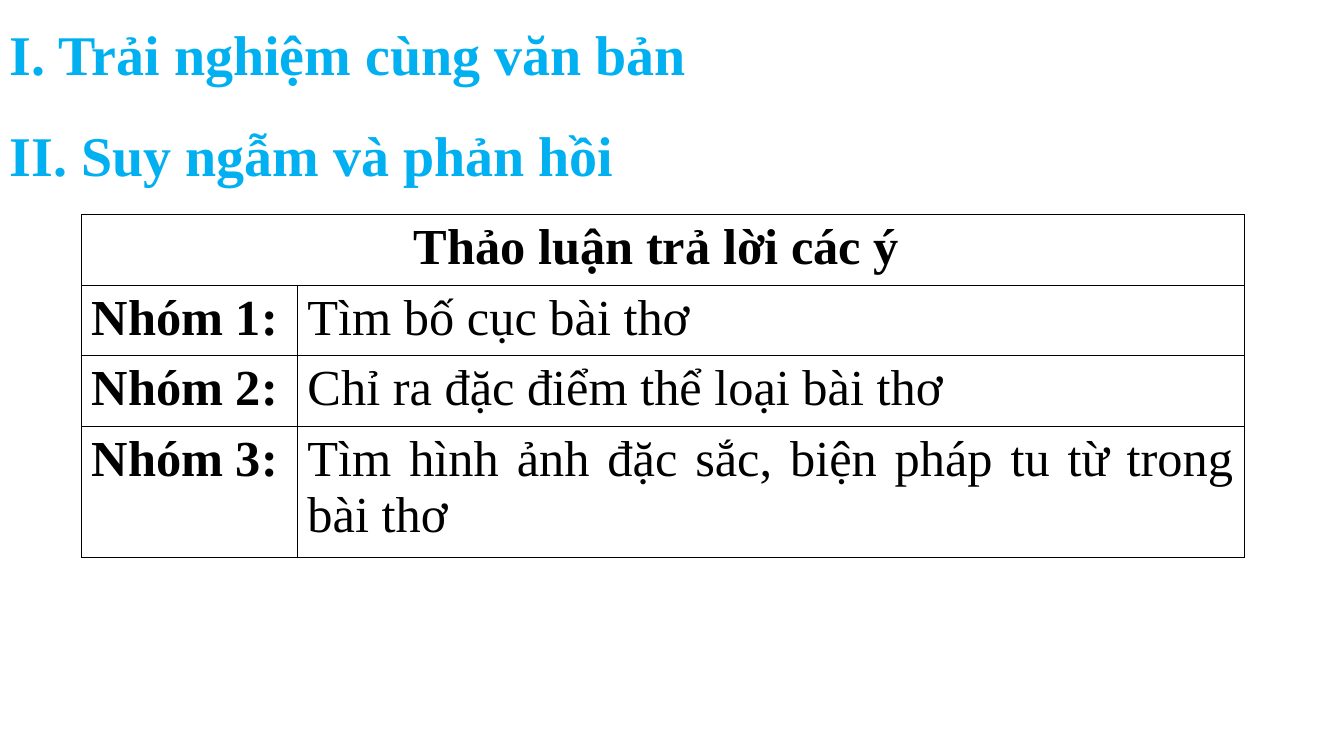
from pptx import Presentation
from pptx.dml.color import RGBColor
from pptx.enum.text import MSO_AUTO_SIZE as AutoSize, PP_ALIGN as Align
from pptx.oxml import parse_xml
from pptx.oxml.ns import nsdecls
from pptx.util import Inches, Pt

COLORS = {"heading": "00B0F0", "text": "000000", "border": "000000"}
HEADINGS = ["I. Trải nghiệm cùng văn bản", "II. Suy ngẫm và phản hồi"]
TABLE_TITLE = "Thảo luận trả lời các ý "
GROUP_TASKS = [
    "Tìm bố cục bài thơ",
    "Chỉ ra đặc điểm thể loại bài thơ",
    "Tìm hình ảnh đặc sắc, biện pháp tu từ trong bài thơ",
]
COLUMN_WIDTHS = [2.14, 9.39]
ROW_HEIGHTS = [0.7, 0.7, 0.7, 1.3]


class SlideBuilder:
    font_name = "Times New Roman"
    heading_size = Pt(40)
    table_size = Pt(36)
    border_width = Pt(1)

    def __init__(self, slide):
        self.slide = slide

    def add_text(self, paragraph, text, size, color, bold, align):
        paragraph.alignment = align
        run = paragraph.add_run()
        run.text = text
        font_format = {"name": self.font_name, "size": size, "bold": bold}
        for name, value in font_format.items():
            setattr(run.font, name, value)
        run.font.color.rgb = RGBColor.from_string(COLORS[color])

    def headings(self, texts, left, top, width, height):
        box = self.slide.shapes.add_textbox(
            Inches(left), Inches(top), Inches(width), Inches(height))
        frame = box.text_frame
        frame.word_wrap = True
        frame.auto_size = AutoSize.SHAPE_TO_FIT_TEXT
        for index, text in enumerate(texts):
            paragraph = frame.add_paragraph() if index else frame.paragraphs[0]
            paragraph.line_spacing = 1.5
            self.add_text(paragraph, text, self.heading_size, "heading", True, Align.JUSTIFY)

    def table(self, left, top, column_widths, row_heights):
        """Add an unfilled table with every cell bordered."""
        table = self.slide.shapes.add_table(
            len(row_heights), len(column_widths), Inches(left), Inches(top),
            Inches(sum(column_widths)), Inches(sum(row_heights))).table
        table.first_row = table.horz_banding = False
        for column, width in zip(table.columns, column_widths):
            column.width = Inches(width)
        for row, height in zip(table.rows, row_heights):
            row.height = Inches(height)
        for cell in table.iter_cells():
            self.border(cell)
            cell.fill.background()
        return table

    def border(self, cell):
        properties = cell._tc.get_or_add_tcPr()
        for side in ("lnL", "lnR", "lnT", "lnB"):
            properties.append(parse_xml(
                f'<a:{side} {nsdecls("a")} w="{self.border_width}"><a:solidFill>'
                f'<a:srgbClr val="{COLORS["border"]}"/></a:solidFill></a:{side}>'))

    def cell_text(self, cell, text, bold, align):
        self.add_text(cell.text_frame.paragraphs[0], text, self.table_size, "text", bold, align)


def main():
    presentation = Presentation()
    presentation.slide_width = Inches(13.33)
    presentation.slide_height = Inches(7.5)
    builder = SlideBuilder(presentation.slides.add_slide(presentation.slide_layouts[6]))

    builder.headings(HEADINGS, 0, -0.19, 12.97, 2.12)
    table = builder.table(0.81, 2.13, COLUMN_WIDTHS, ROW_HEIGHTS)
    title_cell = table.cell(0, 0)
    title_cell.merge(table.cell(0, 1))
    builder.cell_text(title_cell, TABLE_TITLE, True, Align.CENTER)
    for number, task in enumerate(GROUP_TASKS, start=1):
        builder.cell_text(table.cell(number, 0), f"Nhóm {number}:", True, Align.LEFT)
        builder.cell_text(table.cell(number, 1), task, False, Align.JUSTIFY)

    presentation.save("out.pptx")


if __name__ == "__main__":
    main()
